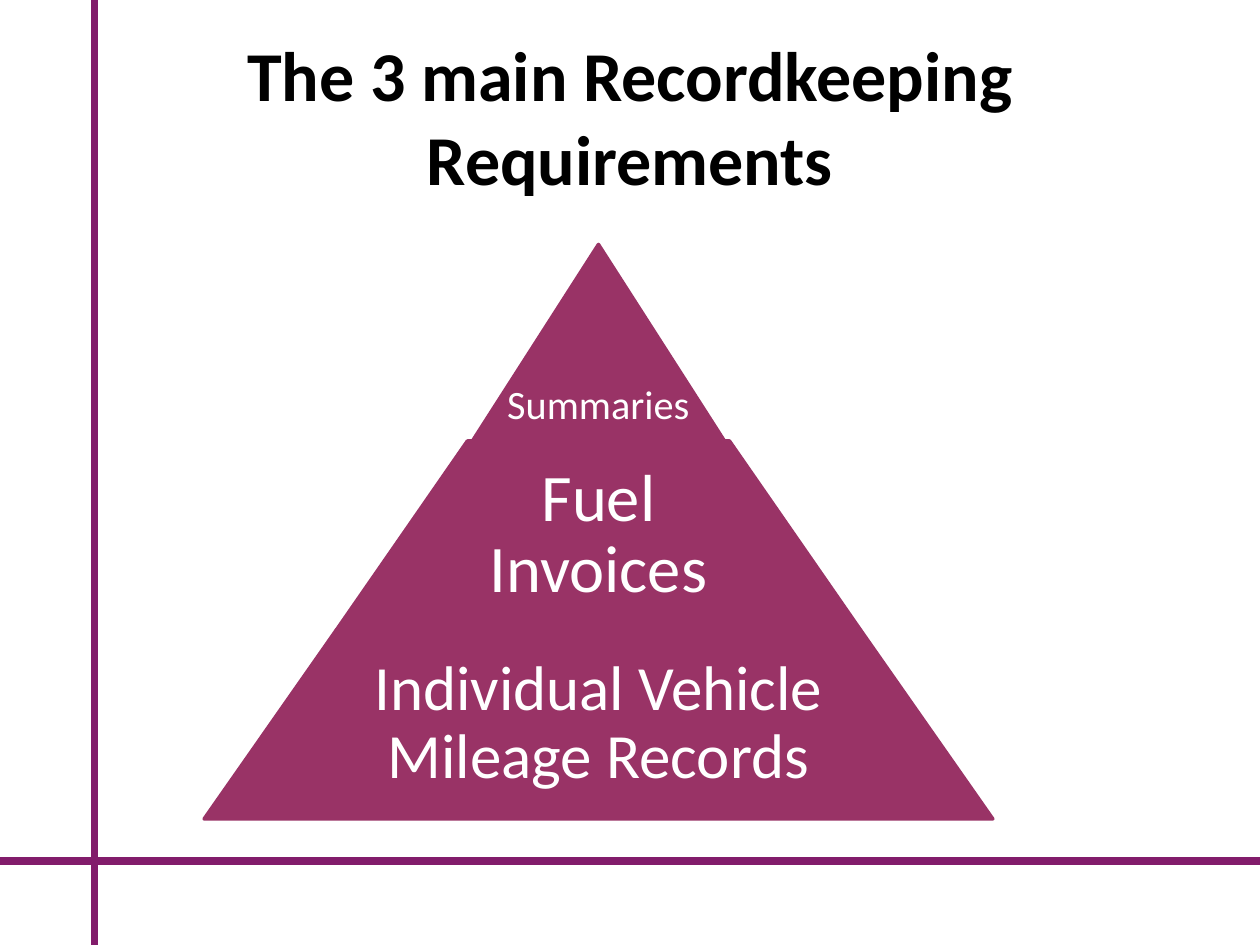
from typing import NamedTuple

from pptx import Presentation
from pptx import util as u
from pptx.dml.color import RGBColor
from pptx.enum import shapes, text
from pptx.oxml.ns import qn

HUES = {"rule": "821C6B", "tier": "993366", "title": "000000", "label": "FFFFFF"}
FONT = "Calibri"
MID = 4.75  # centre line of the pyramid


class Rule(NamedTuple):
    x1: float
    y1: float
    x2: float
    y2: float


class Tier(NamedTuple):
    label: str
    size: int
    top: float
    base: float
    upper: float  # half width at the top
    lower: float  # half width at the base
    side: float  # left and right inset
    foot: float  # top and bottom inset
    anchor: text.MSO_ANCHOR = text.MSO_ANCHOR.MIDDLE


RULES = [Rule(0, 6.83, 10, 6.83), Rule(0.75, 0, 0.75, 7.5)]
TIERS = [
    Tier("Summaries", 23, 1.94, 3.5, 0, 1, 0.03, 0.1, text.MSO_ANCHOR.BOTTOM),
    Tier("Fuel Invoices", 38, 3.5, 5, 1.04, 2.08, 0.87, 0.05),
    Tier("Individual Vehicle Mileage Records", 36, 5, 6.5, 2.08, 3.13, 1.28, 0.05),
]


def hue(name: str) -> RGBColor:
    return RGBColor.from_string(HUES[name])


def write(frame, words: str, size: int, tint: str, bold: bool = False):
    frame.word_wrap = True
    para = frame.paragraphs[0]
    para.text = words
    para.alignment = text.PP_ALIGN.CENTER
    font = para.font
    font.name, font.size, font.bold = FONT, u.Pt(size), bold
    font.color.rgb = hue(tint)
    return para


def draw_rule(slide, rule: Rule) -> None:
    line = slide.shapes.add_connector(
        shapes.MSO_CONNECTOR.STRAIGHT, *(u.Inches(v) for v in rule))
    line.line.color.rgb = hue("rule")
    line.line.width = u.Pt(4.5)
    props = line._element.spPr
    props.append(props.makeelement(qn("a:effectLst"), {}))


def draw_title(slide, words: str) -> None:
    box = slide.shapes.add_textbox(
        u.Inches(0.5), u.Inches(0), u.Inches(9), u.Inches(1.83))
    box.text_frame.vertical_anchor = text.MSO_ANCHOR.MIDDLE
    write(box.text_frame, words, 40, "title", bold=True)


def draw_tier(slide, tier: Tier) -> None:
    """Draw one slice of the pyramid with rounded outline corners."""
    spots = [
        (MID - tier.lower, tier.base),
        (MID - tier.upper, tier.top),
        (MID + tier.upper, tier.top),
        (MID + tier.lower, tier.base),
    ]
    first, *rest = [(u.Inches(x), u.Inches(y)) for x, y in spots]
    pen = slide.shapes.build_freeform(*first)
    pen.add_line_segments(rest, close=True)
    slab = pen.convert_to_shape()
    slab.shadow.inherit = False
    slab.fill.solid()
    slab.fill.fore_color.rgb = hue("tier")
    slab.line.color.rgb = hue("tier")
    slab.line.width = u.Pt(2)
    edge = slab._element.spPr.find(qn("a:ln"))
    edge.append(edge.makeelement(qn("a:round"), {}))

    frame = slab.text_frame
    frame.margin_left = frame.margin_right = u.Inches(tier.side)
    frame.margin_top = frame.margin_bottom = u.Inches(tier.foot)
    frame.vertical_anchor = tier.anchor
    write(frame, tier.label, tier.size, "label").line_spacing = 0.9


def main() -> None:
    deck = Presentation()
    deck.slide_width, deck.slide_height = u.Inches(10), u.Inches(7.5)
    slide = deck.slides.add_slide(deck.slide_layouts[6])
    for rule in RULES:
        draw_rule(slide, rule)
    draw_title(slide, "The 3 main Recordkeeping Requirements")
    for tier in TIERS:
        draw_tier(slide, tier)
    deck.save("out.pptx")


if __name__ == "__main__":
    main()
